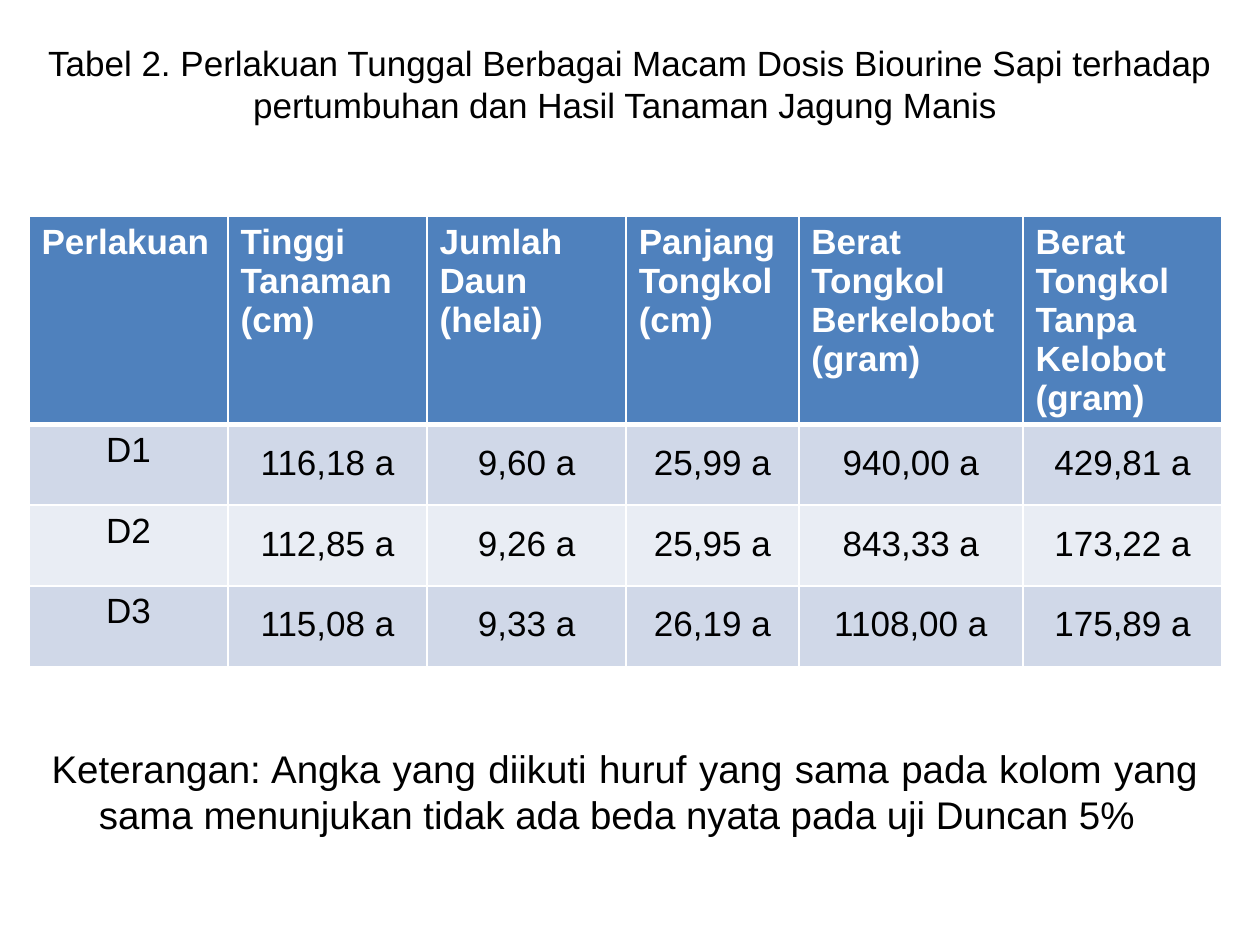
from lxml import etree
from pptx import Presentation
from pptx import util as u
from pptx.dml.color import RGBColor
from pptx.enum import text
from pptx.oxml import ns

PX = u.Inches(1) // 100
BLACK = RGBColor(0x00, 0x00, 0x00)
WHITE = RGBColor(0xFF, 0xFF, 0xFF)
HEADER_BLUE = RGBColor(0x4F, 0x81, 0xBD)
BAND_DARK = RGBColor(0xD0, 0xD8, 0xE8)
BAND_LIGHT = RGBColor(0xE9, 0xED, 0xF4)
CENTER = text.PP_ALIGN.CENTER

TITLE = ("Tabel 2. Perlakuan Tunggal Berbagai Macam Dosis Biourine Sapi "
         "terhadap pertumbuhan dan Hasil Tanaman Jagung Manis ")
NOTE = ("Keterangan: Angka yang diikuti huruf yang sama pada kolom yang sama "
        "menunjukan tidak ada beda nyata pada uji Duncan 5%")
ROWS = [
    ["Perlakuan", "Tinggi Tanaman (cm)", "Jumlah Daun (helai)",
     "Panjang Tongkol (cm)", "Berat Tongkol Berkelobot (gram)",
     "Berat Tongkol Tanpa Kelobot (gram)"],
    ["D1", "116,18 a", "9,60 a", "25,99 a", "940,00 a", "429,81 a"],
    ["D2", "112,85 a", "9,26 a", "25,95 a", "843,33 a", "173,22 a"],
    ["D3", "115,08 a", "9,33 a", "26,19 a", "1108,00 a", "175,89 a"],
]
COLUMN_WIDTHS = [158, 158, 158, 137, 178, 158]
ROW_HEIGHTS = [162, 64, 64, 64]


def apply(target, **values):
    for name, value in values.items():
        setattr(target, name, value)


def place(shape, box):
    names = ("left", "top", "width", "height")
    apply(shape, **{name: value * PX for name, value in zip(names, box)})


def write(frame, words, size, color, bold=False, **para_format):
    para = frame.paragraphs[0]
    apply(para, **para_format)
    span = para.add_run()
    span.text = words
    apply(span.font, name="Arial", size=u.Pt(size), bold=bold)
    span.font.color.rgb = color
    return para


def add_title(page, box):
    title = page.shapes.title
    place(title, box)
    title.text_frame.vertical_anchor = text.MSO_ANCHOR.MIDDLE
    write(title.text_frame, TITLE, 20, BLACK, alignment=CENTER)


def add_note(page, box):
    note = page.placeholders[1]
    place(note, box)
    para = write(note.text_frame, NOTE, 22, BLACK,
                 alignment=text.PP_ALIGN.JUSTIFY)
    etree.SubElement(para._p.get_or_add_pPr(), ns.qn("a:buNone"))


def set_borders(cell, **widths):
    properties = cell._tc.get_or_add_tcPr()
    for index, side in enumerate("LRTB"):
        line = etree.Element(ns.qn(f"a:ln{side}"),
                             w=str(u.Pt(widths.get(side, 1))))
        fill = etree.SubElement(line, ns.qn("a:solidFill"))
        etree.SubElement(fill, ns.qn("a:srgbClr"), val=str(WHITE))
        properties.insert(index, line)


def format_header(cell, words):
    cell.fill.solid()
    cell.fill.fore_color.rgb = HEADER_BLUE
    write(cell.text_frame, words, 20, WHITE, bold=True)
    set_borders(cell, B=3)


def format_value(cell, words, row, column):
    cell.fill.solid()
    cell.fill.fore_color.rgb = BAND_DARK if row % 2 else BAND_LIGHT
    para_format = {"alignment": CENTER}
    if column:
        para_format["line_spacing"] = 1.5
        apply(cell, margin_left=7 * PX, margin_right=7 * PX,
              margin_top=0, margin_bottom=0)
    write(cell.text_frame, words, 20, BLACK, **para_format)
    set_borders(cell, T=3 if row == 1 else 1)


def add_results(page, left, top):
    box = (left, top, sum(COLUMN_WIDTHS), sum(ROW_HEIGHTS))
    table = page.shapes.add_table(len(ROWS), len(COLUMN_WIDTHS),
                                  *(value * PX for value in box)).table
    for column, width in zip(table.columns, COLUMN_WIDTHS):
        column.width = width * PX
    for row, height in zip(table.rows, ROW_HEIGHTS):
        row.height = height * PX
    for row, values in enumerate(ROWS):
        for column, words in enumerate(values):
            cell = table.cell(row, column)
            if row:
                format_value(cell, words, row, column)
            else:
                format_header(cell, words)


def main():
    deck = Presentation()
    apply(deck, slide_width=1000 * PX, slide_height=750 * PX)
    page = deck.slides.add_slide(deck.slide_layouts[1])
    add_note(page, (31, 586, 930, 109))
    add_results(page, 23, 172)
    add_title(page, (0, 0, 1000, 133))
    deck.save("out.pptx")


if __name__ == "__main__":
    main()
